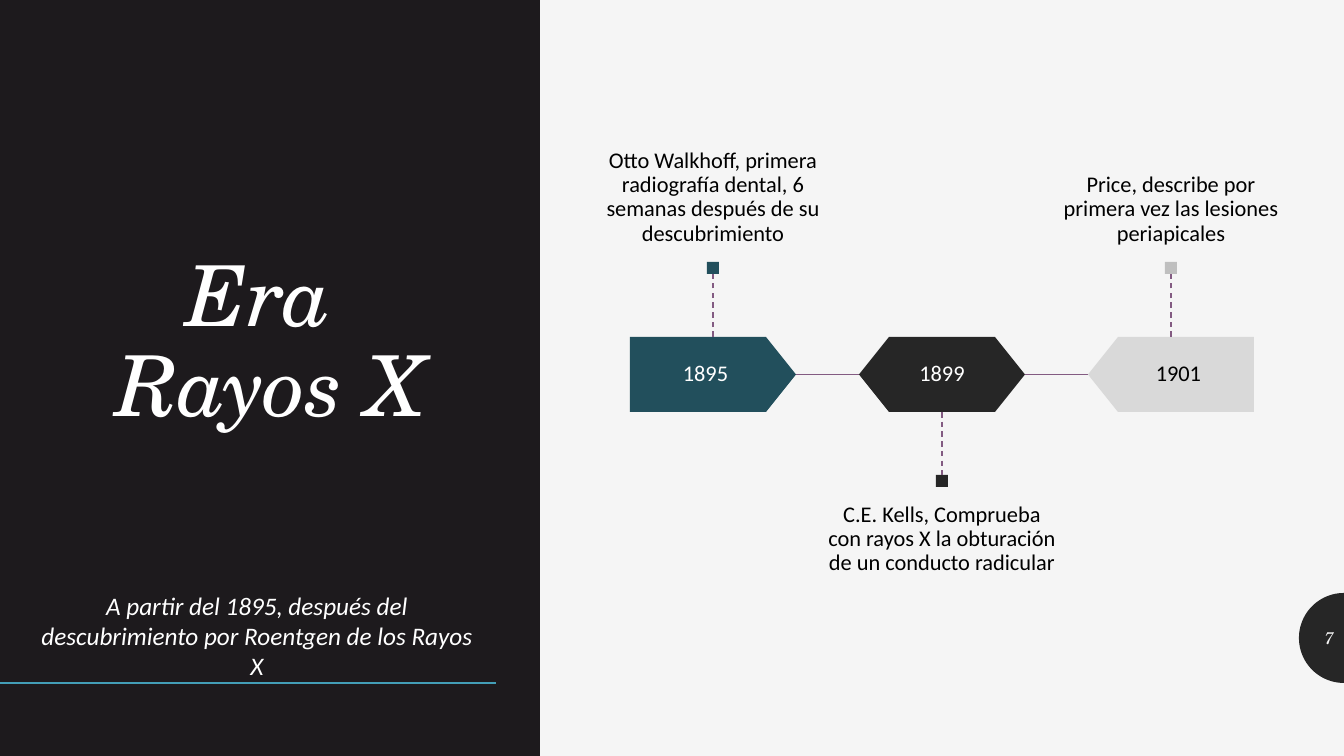
"""Build a timeline slide about the X-ray era in dental practice."""
from dataclasses import dataclass
from math import cos, pi, sin
from typing import Any

from lxml.etree import SubElement
from pptx import Presentation
from pptx.dml.color import RGBColor
from pptx.enum.dml import MSO_LINE_DASH_STYLE as Dash
from pptx.enum.shapes import MSO_CONNECTOR as Link, MSO_SHAPE as Preset
from pptx.enum.text import MSO_ANCHOR as Anchor, MSO_AUTO_SIZE as Fit, PP_ALIGN as Align
from pptx.oxml.ns import qn
from pptx.util import Emu, Pt

EMU_PER_PX = 914400 / 100.8
SANS, SERIF = "Calibri", "TeX Gyre Schola"
WHITE, BLACK, PAPER = "FFFFFF", "000000", "F5F5F5"
PANEL, DARK, TEAL, PLUM = "1D1A1D", "262626", "439EB7", "835B82"

FIRST_CENTRE, PITCH = 713, 229
YEAR_TOP, YEAR_WIDTH, YEAR_HEIGHT = 337, 166, 75
LABEL_WIDTH, LABEL_HEIGHT, LABEL_INSET = 230, 200, 16
MARKER, STEM = 12, 63


@dataclass
class Style:
    """Hold the look of one piece of text."""

    size: int
    colour: str
    font: str = SANS
    italic: bool = False
    align: Any = Align.CENTER
    anchor: Any = Anchor.TOP
    spacing: float = 1.0


@dataclass
class Milestone:
    """Describe one year on the timeline."""

    year: str
    label: str
    preset: Any
    fill: str
    marker_fill: str
    year_colour: str = WHITE
    above: bool = True
    flipped: bool = False


MILESTONES = [
    Milestone("1895", "Otto Walkhoff, primera radiografía dental, 6 semanas "
              "después de su descubrimiento", Preset.PENTAGON, "224F5C", "224F5C"),
    Milestone("1899", "C.E. Kells, Comprueba con rayos X la obturación de un "
              "conducto radicular", Preset.HEXAGON, DARK, DARK, above=False),
    Milestone("1901", "Price, describe por primera vez las lesiones periapicales",
              Preset.PENTAGON, "D9D9D9", "BFBFBF", BLACK, flipped=True),
]


def px(length: float) -> Emu:
    """Turn pixels into EMU."""
    return Emu(round(length * EMU_PER_PX))


def rgb(colour: str) -> RGBColor:
    """Turn a hex string into a colour."""
    return RGBColor.from_string(colour)


def paint(shape: Any, colour: str) -> None:
    """Give a shape a flat fill without line or shadow."""
    shape.shadow.inherit = False
    shape.fill.solid()
    shape.fill.fore_color.rgb = rgb(colour)
    shape.line.fill.background()


def write(box: Any, lines: list[str], style: Style, inset: tuple[int, int] = (10, 5)) -> None:
    """Write lines into one paragraph of a shape."""
    frame = box.text_frame
    frame.word_wrap = True
    frame.auto_size = Fit.NONE
    frame.vertical_anchor = style.anchor
    frame.margin_left = frame.margin_right = px(inset[0])
    frame.margin_top = frame.margin_bottom = px(inset[1])
    para = frame.paragraphs[0]
    para.alignment = style.align
    para.line_spacing = style.spacing
    for index, line in enumerate(lines):
        if index:
            para.add_line_break()
        span = para.add_run()
        span.text = line
        span.font.name = style.font
        span.font.size = Pt(style.size)
        span.font.italic = style.italic
        span.font.color.rgb = rgb(style.colour)


def add_block(page: Any, preset: Any, left: int, top: int, width: int, height: int,
              colour: str) -> Any:
    """Add a flat preset shape."""
    block = page.shapes.add_shape(preset, px(left), px(top), px(width), px(height))
    paint(block, colour)
    return block


def add_text(page: Any, left: int, top: int, width: int, height: int, text: str,
             style: Style, inset: tuple[int, int] = (10, 5)) -> None:
    """Add a text box."""
    box = page.shapes.add_textbox(px(left), px(top), px(width), px(height))
    write(box, [text], style, inset)


def add_line(page: Any, start: tuple[int, int], end: tuple[int, int], colour: str,
             weight: float) -> Any:
    """Add a straight line without shadow."""
    line = page.shapes.add_connector(Link.STRAIGHT, *map(px, start + end))
    line.line.color.rgb = rgb(colour)
    line.line.width = Pt(weight)
    SubElement(line._element.spPr, qn("a:effectLst"))
    return line


def add_milestone(page: Any, centre: int, item: Milestone) -> None:
    """Add a year block with its stem, marker and label."""
    block = add_block(page, item.preset, centre - YEAR_WIDTH // 2, YEAR_TOP,
                      YEAR_WIDTH, YEAR_HEIGHT, item.fill)
    block.adjustments[0] = 0.4
    if item.flipped:
        block._element.spPr.get_or_add_xfrm().set("flipH", "1")
    write(block, [item.year], Style(16, item.year_colour, anchor=Anchor.MIDDLE, spacing=0.9),
          (0, 0))

    if item.above:
        stem_start = YEAR_TOP
        marker_top = YEAR_TOP - STEM - MARKER
        label_top, anchor, site = marker_top - LABEL_HEIGHT, Anchor.BOTTOM, 2
    else:
        stem_start = YEAR_TOP + YEAR_HEIGHT
        marker_top = stem_start + STEM
        label_top, anchor, site = marker_top + MARKER, Anchor.TOP, 0
    marker = add_block(page, Preset.RECTANGLE, centre - MARKER // 2, marker_top,
                       MARKER, MARKER, item.marker_fill)
    stem = add_line(page, (centre, stem_start), (centre, marker_top), PLUM, 1)
    stem.line.dash_style = Dash.DASH
    stem.end_connect(marker, site)
    add_text(page, centre - LABEL_WIDTH // 2, label_top, LABEL_WIDTH, LABEL_HEIGHT,
             item.label, Style(16, BLACK, anchor=anchor, spacing=0.9), (0, LABEL_INSET))


def add_page_number(page: Any, number: str) -> None:
    """Add the half disc at the right edge with the page number."""
    radius, steps = 45, 48
    angles = [pi / 2 + pi * step / steps for step in range(steps + 1)]
    points = [(px(1344 + radius * cos(a)), px(638 - radius * sin(a))) for a in angles]
    builder = page.shapes.build_freeform(*points[0])
    builder.add_line_segments(points[1:], close=True)
    paint(builder.convert_to_shape(), DARK)
    add_text(page, 1299, 618, 45, 40, number,
             Style(12, PAPER, SERIF, True, Align.RIGHT, Anchor.MIDDLE))


def main() -> None:
    """Build and save the deck."""
    deck = Presentation()
    deck.slide_width, deck.slide_height = px(1344), px(756)
    page = deck.slides.add_slide(deck.slide_layouts[5])
    page.background.fill.solid()
    page.background.fill.fore_color.rgb = rgb(PAPER)

    add_block(page, Preset.RECTANGLE, 0, 0, 540, 756, PANEL)
    add_line(page, (0, 683), (496, 683), TEAL, 2)
    title = page.shapes.title
    title.left, title.top, title.width, title.height = map(px, (60, 195, 422, 245))
    write(title, ["Era ", "Rayos X"],
          Style(60, WHITE, SERIF, True, anchor=Anchor.BOTTOM, spacing=0.9))
    page.shapes._spTree.append(title._element)
    add_text(page, 30, 585, 454, 102, "A partir del 1895, después del descubrimiento "
             "por Roentgen de los Rayos X", Style(18, WHITE, italic=True))

    middle = YEAR_TOP + YEAR_HEIGHT // 2
    for index, item in enumerate(MILESTONES):
        centre = FIRST_CENTRE + index * PITCH
        if index:
            right = centre - YEAR_WIDTH // 2
            add_line(page, (right - PITCH + YEAR_WIDTH, middle), (right, middle), PLUM, 0.5)
        add_milestone(page, centre, item)
    add_page_number(page, "7")
    deck.save("out.pptx")


if __name__ == "__main__":
    main()
